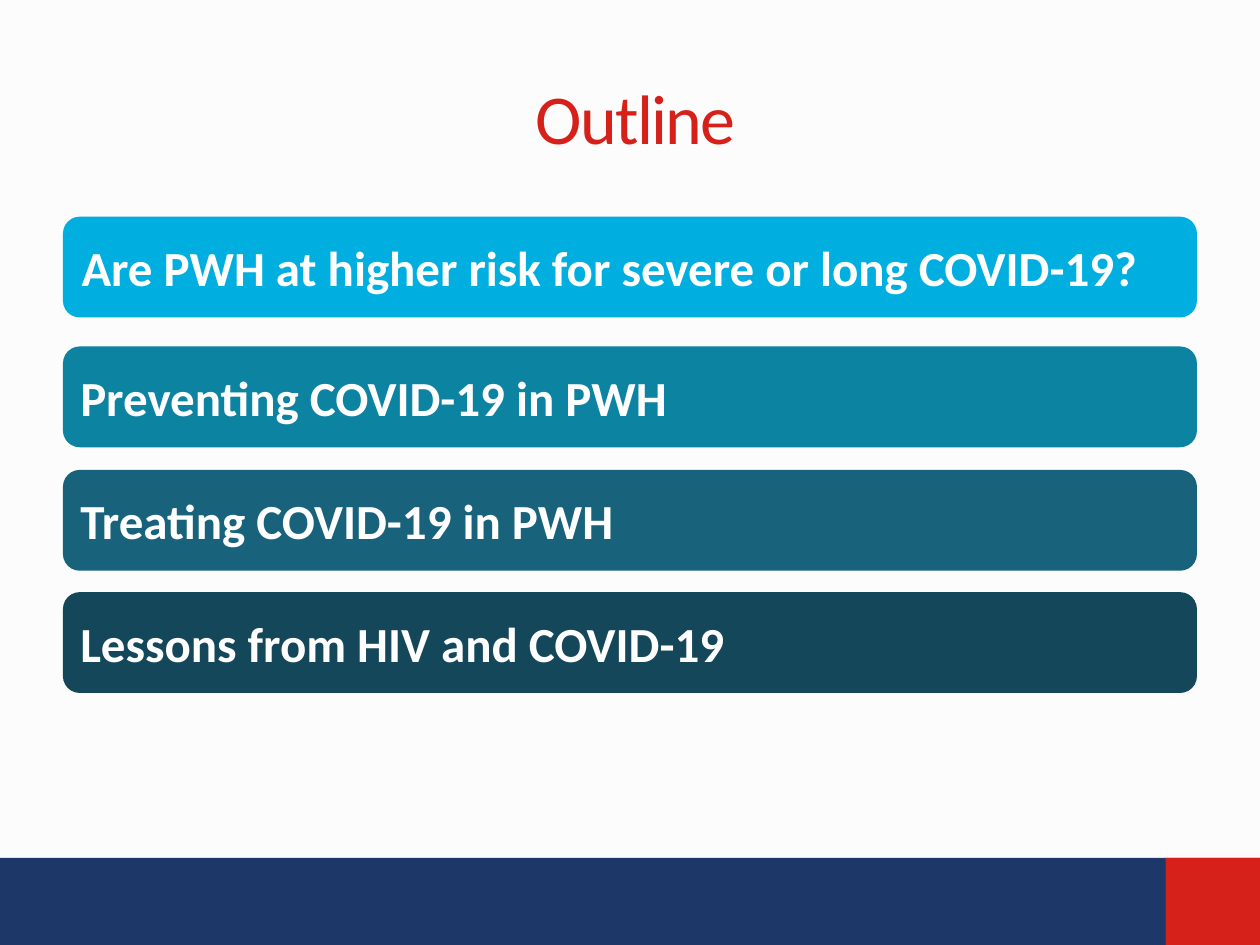
from dataclasses import dataclass
from typing import Any

from pptx import Presentation
from pptx import util as u
from pptx.dml.color import RGBColor
from pptx.enum import shapes, text

COLORS = {
    "background": "FCFCFC",
    "navy": "1C3768",
    "red": "D6201A",
    "white": "FFFFFF",
    "sky": "00AFDF",
    "teal": "0D83A2",
    "petrol": "18637B",
    "deep": "134759",
}


def write(frame, words, *, size, color, bold=False, align=text.PP_ALIGN.LEFT,
          spacing=None, indent=0):
    frame.word_wrap = True
    frame.vertical_anchor = text.MSO_ANCHOR.MIDDLE
    paragraph = frame.paragraphs[0]
    paragraph.alignment = align
    if indent:
        properties = paragraph._p.get_or_add_pPr()
        properties.set("marL", str(u.Inches(indent)))
    run = paragraph.add_run()
    run.text = words
    run.font.name = "Calibri"
    run.font.size = u.Pt(size)
    run.font.bold = bold
    run.font.color.rgb = RGBColor.from_string(COLORS[color])
    if spacing is not None:
        run.font._element.set("spc", str(int(spacing * 100)))


@dataclass
class OutlineSlide:
    """Holds the slide and the look of its elements."""

    slide: Any
    item_size: int = 28
    title_size: int = 40

    def background(self, color):
        fill = self.slide.background.fill
        fill.solid()
        fill.fore_color.rgb = RGBColor.from_string(COLORS[color])

    def block(self, kind, box, color):
        block = self.slide.shapes.add_shape(kind, *map(u.Inches, box))
        block.shadow.inherit = False
        block.fill.solid()
        block.fill.fore_color.rgb = RGBColor.from_string(COLORS[color])
        block.line.fill.background()
        return block

    def band(self, box, color):
        self.block(shapes.MSO_SHAPE.RECTANGLE, box, color)

    def title(self, words, box):
        heading = self.slide.shapes.add_textbox(*map(u.Inches, box))
        write(heading.text_frame, words, size=self.title_size, color="red",
              align=text.PP_ALIGN.CENTER, spacing=-1)

    def item(self, words, top, color, indent=0):
        bar = self.block(shapes.MSO_SHAPE.FLOWCHART_ALTERNATE_PROCESS,
                         (0.5, top, 9, 0.8), color)
        write(bar.text_frame, words, size=self.item_size, color="white",
              bold=True, indent=indent)


def main():
    deck = Presentation()
    deck.slide_width, deck.slide_height = u.Inches(10), u.Inches(7.5)
    outline = OutlineSlide(deck.slides.add_slide(deck.slide_layouts[6]))

    outline.background("background")
    outline.band((0, 6.81, 10, 0.7), "navy")
    outline.band((9.25, 6.81, 0.75, 0.7), "red")
    outline.title("Outline", (0.5, 0.3, 9.09, 1.25))

    topics = [
        ("Are PWH at higher risk for severe or long COVID-19?", 1.72, "sky", 0.01),
        ("Preventing COVID-19 in PWH", 2.75, "teal", 0),
        ("Treating COVID-19 in PWH", 3.73, "petrol", 0),
        ("Lessons from HIV and COVID-19", 4.7, "deep", 0),
    ]
    for topic in topics:
        outline.item(*topic)

    deck.save("out.pptx")


if __name__ == "__main__":
    main()
